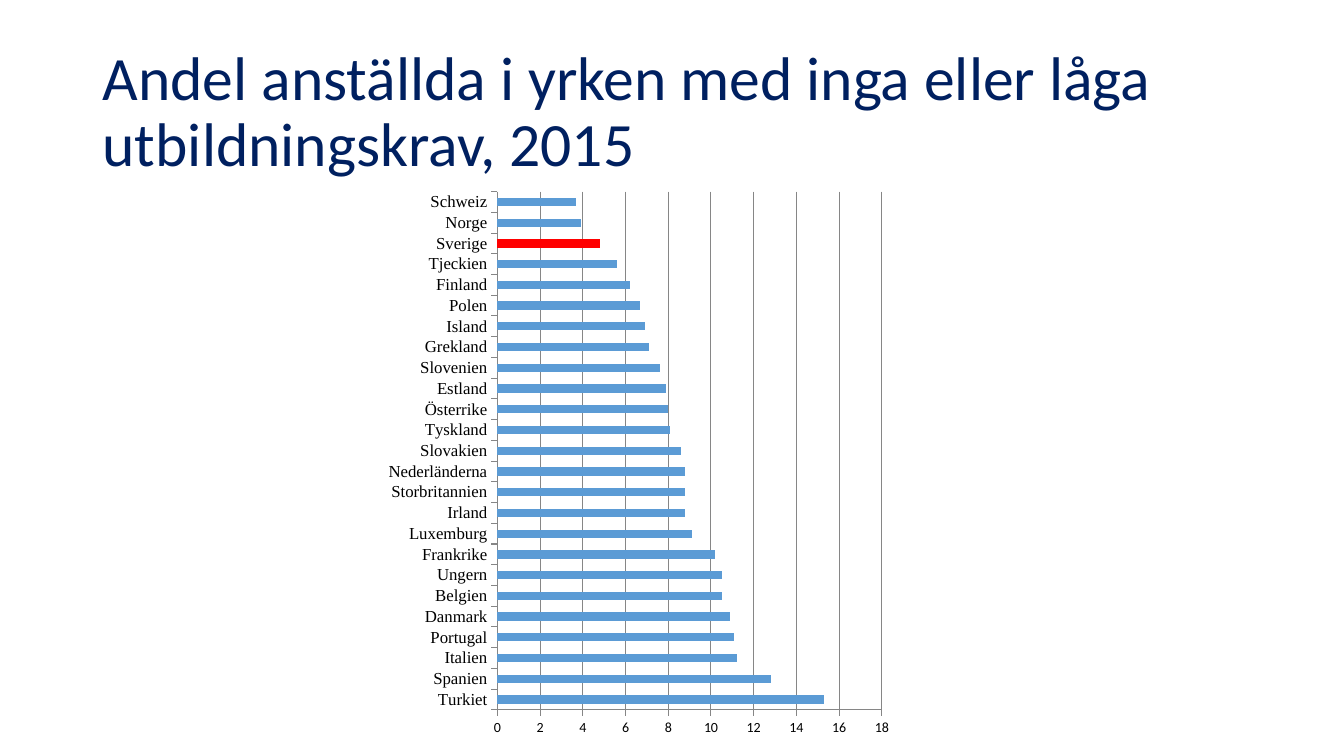
"""Build a slide with a bar chart of low-qualification jobs by country."""
from lxml.etree import SubElement
from pptx import Presentation
from pptx.chart.data import CategoryChartData
from pptx.dml.color import RGBColor
from pptx.enum.chart import XL_CHART_TYPE as ChartType, XL_TICK_MARK as TickMark
from pptx.enum.text import MSO_ANCHOR as Anchor
from pptx.oxml.ns import qn
from pptx.util import Inches, Pt

TITLE = "Andel anställda i yrken med inga eller låga utbildningskrav, 2015"
SHARES = {
    "Turkiet": 15.3, "Spanien": 12.8, "Italien": 11.2, "Portugal": 11.1,
    "Danmark": 10.9, "Belgien": 10.5, "Ungern": 10.5, "Frankrike": 10.2,
    "Luxemburg": 9.1, "Irland": 8.8, "Storbritannien": 8.8,
    "Nederländerna": 8.8, "Slovakien": 8.6, "Tyskland": 8.1,
    "Österrike": 8, "Estland": 7.9, "Slovenien": 7.6, "Grekland": 7.1,
    "Island": 6.9, "Polen": 6.7, "Finland": 6.2, "Tjeckien": 5.6,
    "Sverige": 4.8, "Norge": 3.9, "Schweiz": 3.7,
}
HIGHLIGHT = "Sverige"
PLOT_LAYOUT = {
    "layoutTarget": "inner", "xMode": "edge", "yMode": "edge",
    "x": 0.24, "y": 0.03, "w": 0.71, "h": 0.9,
}
PLOT_LAYOUT.update(x=0.236, y=0.035, w=0.713, h=0.896)
NAVY = RGBColor(0x00, 0x20, 0x60)
BLUE = RGBColor(0x5B, 0x9B, 0xD5)
RED = RGBColor(0xFF, 0x00, 0x00)
BLACK = RGBColor(0x00, 0x00, 0x00)
GRAY = RGBColor(0x86, 0x86, 0x86)


def set_font(font, name, size, color):
    font.name, font.size = name, Pt(size)
    font.color.rgb = color


def add_title(slide):
    frame = slide.shapes.add_textbox(
        Inches(0.92), Inches(0.4), Inches(11.5), Inches(1.45)).text_frame
    frame.word_wrap = True
    frame.vertical_anchor = Anchor.MIDDLE
    frame.text = TITLE
    heading = frame.paragraphs[0]
    heading.line_spacing = 0.9
    set_font(heading.runs[0].font, "Calibri", 44, NAVY)


def place_plot(chart):
    plot_area = chart._chartSpace.chart.plotArea
    for old_layout in plot_area.findall(qn("c:layout")):
        plot_area.remove(old_layout)
    layout = SubElement(plot_area, qn("c:layout"))
    plot_area.insert(0, layout)
    manual = SubElement(layout, qn("c:manualLayout"))
    for key, value in PLOT_LAYOUT.items():
        SubElement(manual, qn(f"c:{key}")).set("val", str(value))


def add_share_chart(slide):
    shares = CategoryChartData()
    shares.categories = list(SHARES)
    shares.add_series("Series 1", list(SHARES.values()))
    chart = slide.shapes.add_chart(
        ChartType.BAR_CLUSTERED, Inches(3.67), Inches(1.7),
        Inches(5.35), Inches(5.74), shares).chart
    chart.has_legend = chart.has_title = False
    set_font(chart.font, "Calibri", 10, BLACK)

    plot = chart.plots[0]
    plot.gap_width = 150
    plot.vary_by_categories = False
    bars = plot.series[0]
    bars.format.fill.solid()
    bars.format.fill.fore_color.rgb = BLUE
    highlight = bars.points[list(SHARES).index(HIGHLIGHT)].format.fill
    highlight.solid()
    highlight.fore_color.rgb = RED

    countries, percent = chart.category_axis, chart.value_axis
    for axis in (countries, percent):
        axis.major_tick_mark = TickMark.OUTSIDE
        axis.minor_tick_mark = TickMark.NONE
        axis.format.line.color.rgb = GRAY
        axis.format.line.width = Pt(0.75)
    set_font(countries.tick_labels.font, "Times New Roman", 12, BLACK)
    countries.has_major_gridlines = False
    percent.minimum_scale, percent.maximum_scale = 0, 18
    percent.major_unit = 2
    percent.has_major_gridlines = True
    percent.major_gridlines.format.line.color.rgb = GRAY
    percent.major_gridlines.format.line.width = Pt(0.75)
    place_plot(chart)


def main():
    deck = Presentation()
    deck.slide_width, deck.slide_height = Inches(13.33), Inches(7.5)
    slide = deck.slides.add_slide(deck.slide_layouts[6])
    add_title(slide)
    add_share_chart(slide)
    deck.save("out.pptx")


if __name__ == "__main__":
    main()
